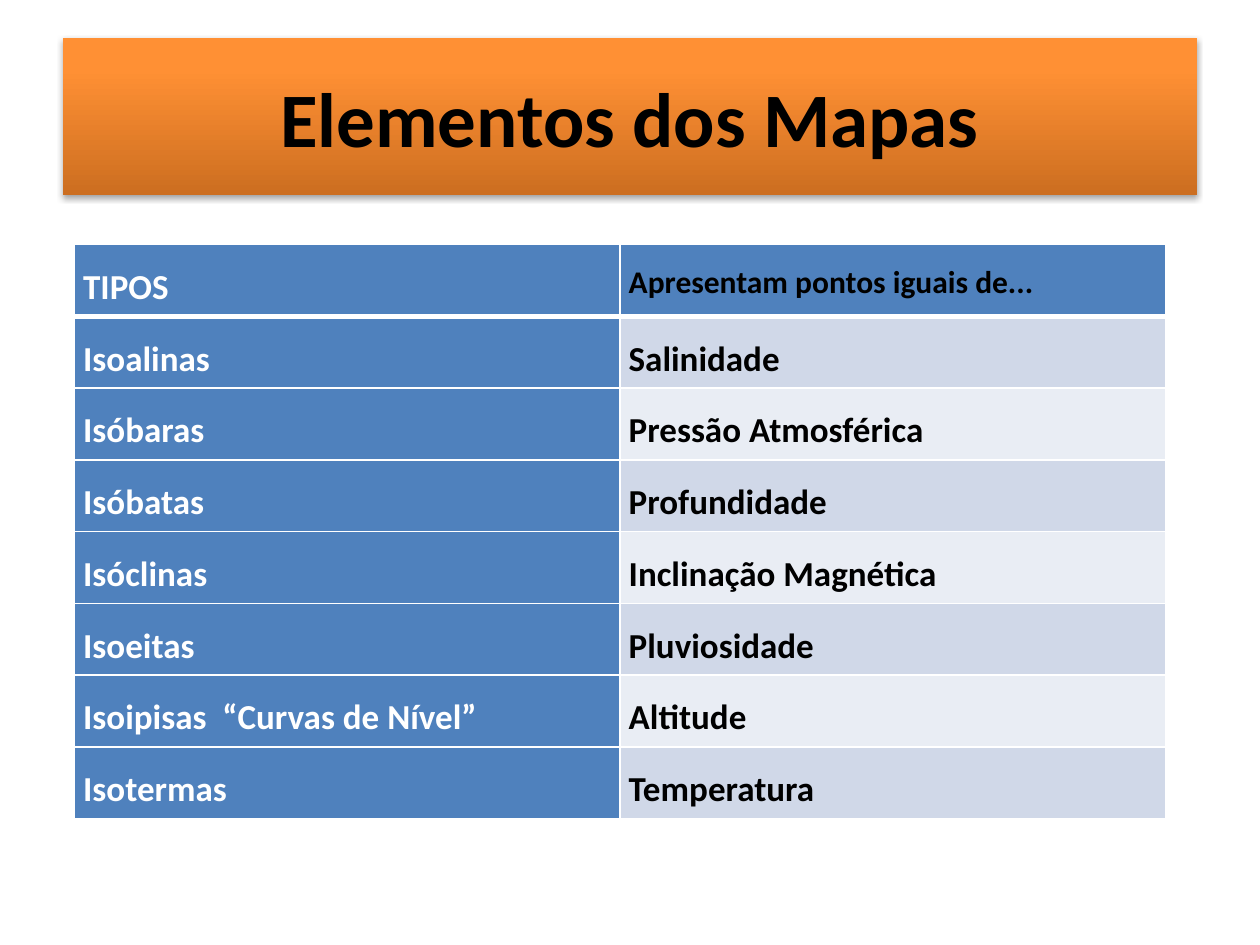
from dataclasses import dataclass

from lxml import etree
from pptx import Presentation
from pptx.dml.color import RGBColor
from pptx.enum.text import MSO_ANCHOR, PP_ALIGN
from pptx.oxml import parse_xml
from pptx.oxml.ns import nsdecls, qn
from pptx.util import Inches, Pt

CENTER, JUSTIFY = PP_ALIGN.CENTER, PP_ALIGN.JUSTIFY
TOP, MIDDLE = MSO_ANCHOR.TOP, MSO_ANCHOR.MIDDLE


@dataclass(frozen=True)
class Theme:
    font: str = "Calibri"
    title_size: int = 44
    heading_size: int = 18
    body_size: int = 20
    dark: str = "000000"
    light: str = "FFFFFF"
    accent: str = "4F81BD"
    bands: tuple[str, str] = ("D0D8E8", "E9EDF4")
    banner: tuple[tuple[int, str], ...] = (
        (0, "CC6E20"), (80, "FF9034"), (100, "FF9136"))
    thin_rule: int = 1
    thick_rule: int = 3


@dataclass(frozen=True)
class Isoline:
    name: str
    quantity: str


THEME = Theme()
SLIDE_WIDTH, SLIDE_HEIGHT = Inches(10), Inches(7.5)
HEADING = Isoline("TIPOS", "Apresentam pontos iguais de...")
ISOLINES = (
    Isoline("Isoalinas", "Salinidade"),
    Isoline("Isóbaras", "Pressão Atmosférica"),
    Isoline("Isóbatas", "Profundidade"),
    Isoline("Isóclinas", "Inclinação Magnética"),
    Isoline("Isoeitas", "Pluviosidade"),
    Isoline("Isoipisas  “Curvas de Nível”", "Altitude"),
    Isoline("Isotermas", "Temperatura"),
)


def add_bold_run(paragraph, text: str, size: int, color: str) -> None:
    run = paragraph.add_run()
    run.text = text
    run.font.name = THEME.font
    run.font.size = Pt(size)
    run.font.bold = True
    run.font.color.rgb = RGBColor.from_string(color)


def paint_banner(banner) -> None:
    """Give the title its vertical gradient and soft shadow."""
    stops = "".join(
        f'<a:gs pos="{share * 1000}"><a:srgbClr val="{color}"/></a:gs>'
        for share, color in THEME.banner)
    properties = banner.element.spPr
    properties.append(parse_xml(
        f'<a:gradFill {nsdecls("a")} rotWithShape="1"><a:gsLst>{stops}</a:gsLst>'
        '<a:lin ang="16200000" scaled="0"/></a:gradFill>'))
    properties.append(parse_xml(
        f'<a:effectLst {nsdecls("a")}><a:outerShdw blurRad="{Pt(3.1)}" '
        f'dist="{Pt(1.8)}" dir="5400000" rotWithShape="0">'
        f'<a:srgbClr val="{THEME.dark}"><a:alpha val="35000"/></a:srgbClr>'
        '</a:outerShdw></a:effectLst>'))


def add_title(slide, text: str) -> None:
    title = slide.shapes.title
    title.left, title.top = int(SLIDE_WIDTH * 0.05), int(SLIDE_HEIGHT * 0.04)
    title.width, title.height = int(SLIDE_WIDTH * 0.9), Inches(1.25)
    paint_banner(title)
    title.text_frame.vertical_anchor = MIDDLE
    paragraph = title.text_frame.paragraphs[0]
    paragraph.alignment = CENTER
    add_bold_run(paragraph, text, THEME.title_size, THEME.dark)


def set_borders(cell, top: int, bottom: int) -> None:
    widths = {"lnL": THEME.thin_rule, "lnR": THEME.thin_rule,
              "lnT": top, "lnB": bottom}
    properties = cell._tc.get_or_add_tcPr()
    for position, (side, width) in enumerate(widths.items()):
        line = etree.Element(qn(f"a:{side}"), w=str(Pt(width)))
        fill = etree.SubElement(line, qn("a:solidFill"))
        etree.SubElement(fill, qn("a:srgbClr"), val=THEME.light)
        properties.insert(position, line)


def fill_cell(cell, text: str, size: int, color: str, fill: str) -> None:
    cell.fill.solid()
    cell.fill.fore_color.rgb = RGBColor.from_string(fill)
    cell.margin_left = cell.margin_right = Inches(0.07)
    cell.margin_top = cell.margin_bottom = 0
    cell.vertical_anchor = TOP
    paragraph = cell.text_frame.paragraphs[0]
    paragraph.alignment = JUSTIFY
    paragraph.line_spacing = 1.5
    add_bold_run(paragraph, text, size, color)


def add_isoline_table(slide) -> None:
    entries = (HEADING, *ISOLINES)
    column_width, row_height = Inches(4.33), Inches(0.57)
    table = slide.shapes.add_table(
        len(entries), 2, Inches(0.59), Inches(1.94),
        column_width * 2, row_height * len(entries)).table
    for index, entry in enumerate(entries):
        heading = index == 0
        table.rows[index].height = row_height
        name_cell, quantity_cell = table.cell(index, 0), table.cell(index, 1)
        fill_cell(name_cell, entry.name, THEME.body_size,
                  THEME.light, THEME.accent)
        fill_cell(quantity_cell, entry.quantity,
                  THEME.heading_size if heading else THEME.body_size, THEME.dark,
                  THEME.accent if heading else THEME.bands[(index - 1) % 2])
        for cell in (name_cell, quantity_cell):
            set_borders(
                cell,
                top=THEME.thick_rule if index == 1 else THEME.thin_rule,
                bottom=THEME.thick_rule if heading else THEME.thin_rule)


def main() -> None:
    deck = Presentation()
    deck.slide_width, deck.slide_height = SLIDE_WIDTH, SLIDE_HEIGHT
    title_only = deck.slide_layouts[5]
    slide = deck.slides.add_slide(title_only)

    # Title banner
    add_title(slide, "Elementos dos Mapas")

    # Isoline types and what each one joins
    add_isoline_table(slide)

    deck.save("out.pptx")


if __name__ == "__main__":
    main()
